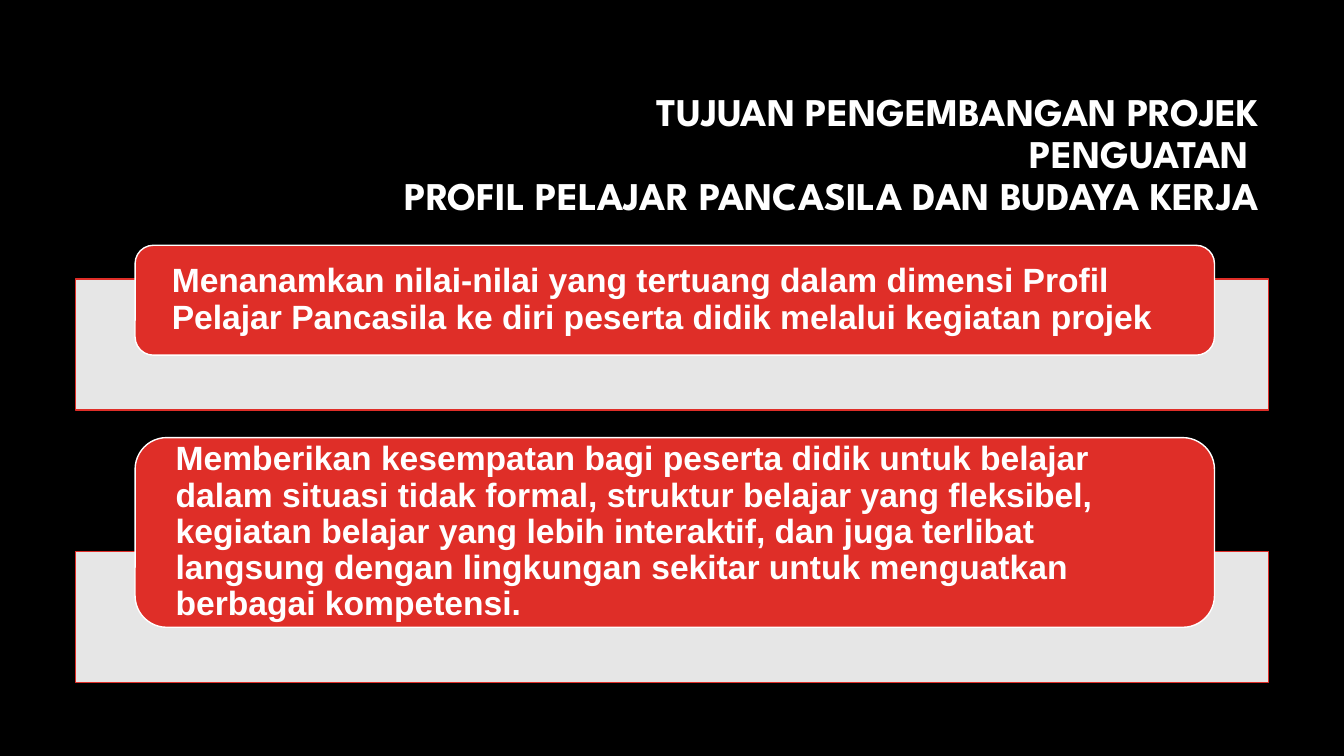
from pptx import Presentation
from pptx.dml.color import RGBColor
from pptx.enum.shapes import MSO_SHAPE
from pptx.enum.text import MSO_ANCHOR, PP_ALIGN
from pptx.util import Pt


def tint(code):
    return RGBColor.from_string(code)


class Deck:
    red = "DF2E28"
    white = "FFFFFF"
    gray = "E6E6E6"

    def __init__(self, slide):
        self.slide = slide
        fill = slide.background.fill
        fill.solid()
        fill.fore_color.rgb = tint("000000")

    def label(self, shape, text, font, size, align, side, edge):
        frame = shape.text_frame
        frame.text = text
        frame.word_wrap = True
        frame.vertical_anchor = MSO_ANCHOR.MIDDLE
        frame.margin_left = frame.margin_right = Pt(side)
        frame.margin_top = frame.margin_bottom = Pt(edge)
        for para in frame.paragraphs:
            para.alignment = align
            para.line_spacing = 0.9
            for run in para.runs:
                run.font.name = font
                run.font.size = Pt(size)
                run.font.bold = True
                run.font.color.rgb = tint(self.white)

    def title(self, text, left, top, width, height):
        box = self.slide.shapes.add_textbox(Pt(left), Pt(top), Pt(width), Pt(height))
        self.label(box, text, "League Spartan", 28, PP_ALIGN.RIGHT, 7.2, 3.6)

    def block(self, kind, left, top, width, height, fill, line):
        shape = self.slide.shapes.add_shape(kind, Pt(left), Pt(top), Pt(width), Pt(height))
        shape.shadow.inherit = False
        shape.fill.solid()
        shape.fill.fore_color.rgb = tint(fill)
        shape.line.color.rgb = tint(line)
        shape.line.width = Pt(1)
        return shape

    def goal(self, text, top, height):
        self.block(MSO_SHAPE.RECTANGLE, 54, top, 852, 93.6, self.gray, self.red)
        pill = self.block(MSO_SHAPE.ROUNDED_RECTANGLE, 96.5, top + 54.3 - height,
                          771, height, self.red, self.white)
        self.label(pill, text, "Arial", 24, PP_ALIGN.LEFT, 22.4, 0)


def main():
    show = Presentation()
    show.slide_width = Pt(960)
    show.slide_height = Pt(540)
    deck = Deck(show.slides.add_slide(show.slide_layouts[6]))
    deck.title("TUJUAN PENGEMBANGAN PROJEK\vPENGUATAN \v"
               "PROFIL PELAJAR PANCASILA DAN BUDAYA KERJA", 228.2, 60.5, 678.2, 101.5)
    goals = [
        ("Menanamkan nilai-nilai yang tertuang dalam dimensi Profil Pelajar "
         "Pancasila ke diri peserta didik melalui kegiatan projek", 78.5),
        ("Memberikan kesempatan bagi peserta didik untuk belajar dalam situasi "
         "tidak formal, struktur belajar yang fleksibel, kegiatan belajar yang "
         "lebih interaktif, dan juga terlibat langsung dengan lingkungan sekitar "
         "untuk menguatkan berbagai kompetensi.", 135.5),
    ]
    for row, (text, height) in enumerate(goals):
        deck.goal(text, 199.4 + row * 194.4, height)
    show.save("out.pptx")


if __name__ == "__main__":
    main()
